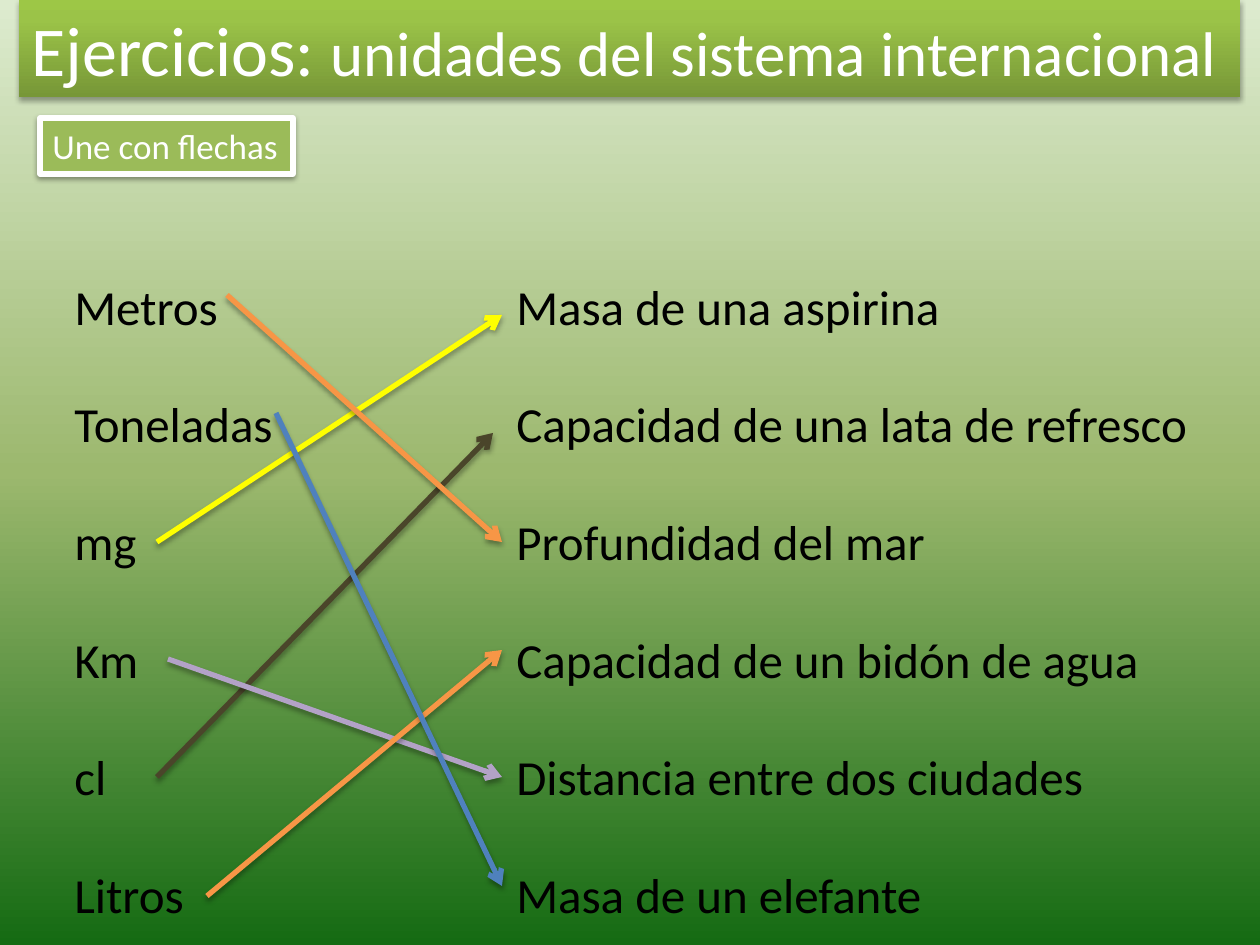
from dataclasses import dataclass

from lxml import etree
from pptx import Presentation
from pptx.dml.color import RGBColor
from pptx.enum.shapes import MSO_CONNECTOR, MSO_SHAPE
from pptx.enum.text import MSO_ANCHOR, MSO_AUTO_SIZE, PP_ALIGN
from pptx.oxml.ns import qn
from pptx.util import Pt

PX = 914400 / 126
RECT = MSO_SHAPE.RECTANGLE
STRAIGHT = MSO_CONNECTOR.STRAIGHT
LEFT = PP_ALIGN.LEFT
TOP, MIDDLE = MSO_ANCHOR.TOP, MSO_ANCHOR.MIDDLE
NO_FIT = MSO_AUTO_SIZE.NONE


@dataclass(frozen=True)
class Theme:
    font: str = "Calibri"
    title: int = 40
    subtitle: int = 36
    body: int = 28
    label: int = 20
    line: int = 3
    black: str = "000000"
    white: str = "FFFFFF"
    green: str = "9BBB59"
    brown: str = "4A452A"
    purple: str = "B3A2C7"
    orange: str = "F79646"
    yellow: str = "FFFF00"
    blue: str = "4F81BD"
    sky: tuple = ((0, "DDEBCF"), (50, "9CB86E"), (100, "156B13"))
    banner: tuple = ((0, "779737"), (80, "9BC348"), (100, "9DC746"))


THEME = Theme()

PAIRS = [
    ("Metros", "Masa de una aspirina"),
    ("Toneladas", "Capacidad de una lata de refresco"),
    ("mg", "Profundidad del mar"),
    ("Km", "Capacidad de un bidón de agua"),
    ("cl", "Distancia entre dos ciudades"),
    ("Litros", "Masa de un elefante"),
]

ARROWS = [
    ((157, 777), (493, 433), THEME.brown),
    ((168, 659), (502, 777), THEME.purple),
    ((207, 896), (502, 650), THEME.orange),
    ((157, 542), (502, 315), THEME.yellow),
    ((276, 413), (502, 886), THEME.blue),
    ((227, 295), (502, 542), THEME.orange),
]


def px(n):
    return round(n * PX)


def add_xml(parent, tag, **attrs):
    return etree.SubElement(parent, qn(tag), {k: str(v) for k, v in attrs.items()})


class Builder:
    def __init__(self, prs, theme):
        self.theme = theme
        self.slide = prs.slides.add_slide(prs.slide_layouts[5])

    def gradient(self, owner, fill, stops, angle):
        """Give the fill any number of colour stops, with a clockwise angle."""
        fill.gradient()
        grad = owner.element.find(".//" + qn("a:gradFill"))
        for child in list(grad):
            grad.remove(child)
        gs_list = add_xml(grad, "a:gsLst")
        for pos, color in stops:
            gs = add_xml(gs_list, "a:gs", pos=pos * 1000)
            add_xml(gs, "a:srgbClr", val=color)
        add_xml(grad, "a:lin", ang=angle * 60000, scaled=0)

    def shadow(self, sp, dist=1.8, alpha=35):
        effects = add_xml(sp.element.spPr, "a:effectLst")
        outer = add_xml(effects, "a:outerShdw", blurRad=Pt(3.1), dist=Pt(dist),
                        dir=90 * 60000, rotWithShape=0)
        color = add_xml(outer, "a:srgbClr", val=self.theme.black)
        add_xml(color, "a:alpha", val=alpha * 1000)

    def frame(self, sp, wrap=False, anchor=TOP):
        tf = sp.text_frame
        settings = {"auto_size": NO_FIT, "word_wrap": wrap, "vertical_anchor": anchor}
        for name, value in settings.items():
            setattr(tf, name, value)
        return tf

    def run(self, p, text, size, color):
        p.alignment = LEFT
        r = p.add_run()
        r.text = text
        for name, value in {"name": self.theme.font, "size": Pt(size)}.items():
            setattr(r.font, name, value)
        r.font.color.rgb = RGBColor.from_string(color)

    def background(self):
        self.gradient(self.slide, self.slide.background.fill, self.theme.sky, 90)

    def title(self, box, parts):
        sp = self.slide.shapes.title
        for name, value in zip(("left", "top", "width", "height"), box):
            setattr(sp, name, px(value))
        self.gradient(sp, sp.fill, self.theme.banner, 270)
        sp.line.fill.background()
        self.shadow(sp)
        p = self.frame(sp).paragraphs[0]
        for text, size in parts:
            self.run(p, text, size, self.theme.white)

    def label(self, box, text):
        sp = self.slide.shapes.add_shape(RECT, *map(px, box))
        sp.fill.solid()
        sp.fill.fore_color.rgb = RGBColor.from_string(self.theme.green)
        sp.line.color.rgb = RGBColor.from_string(self.theme.white)
        sp.line.width = Pt(self.theme.line)
        self.shadow(sp, dist=1.6, alpha=38)
        p = self.frame(sp).paragraphs[0]
        self.run(p, text, self.theme.label, self.theme.white)

    def matching(self, box, pairs, indent, tab):
        """Set each pair on one line, its right half one tab step from the left."""
        tf = self.frame(self.slide.shapes.add_textbox(*map(px, box)), True, MIDDLE)
        for i, pair in enumerate(pairs):
            p = tf.add_paragraph() if i else tf.paragraphs[0]
            pPr = p._p.get_or_add_pPr()
            for name, value in {"marL": 0, "indent": indent, "defTabSz": tab}.items():
                pPr.set(name, str(px(value)))
            p.line_spacing = 2.0
            self.run(p, "\t".join(pair), self.theme.body, self.theme.black)

    def arrow(self, start, end, color):
        line = self.slide.shapes.add_connector(STRAIGHT, *map(px, start + end))
        line.line.color.rgb = RGBColor.from_string(color)
        line.line.width = Pt(self.theme.line)
        add_xml(line.element.spPr.find(qn("a:ln")), "a:tailEnd", type="arrow")
        self.shadow(line)


def main():
    prs = Presentation()
    prs.slide_width, prs.slide_height = px(1260), px(945)
    page = Builder(prs, THEME)
    page.background()
    page.matching((0, 217, 1260, 707), PAIRS, indent=62, tab=504)
    page.label((40, 118, 253, 56), "Une con flechas")
    page.title((19, 0, 1221, 97), [
        ("Ejercicios: ", THEME.title),
        ("unidades del sistema internacional", THEME.subtitle),
    ])
    for start, end, color in ARROWS:
        page.arrow(start, end, color)
    prs.save("out.pptx")


if __name__ == "__main__":
    main()
